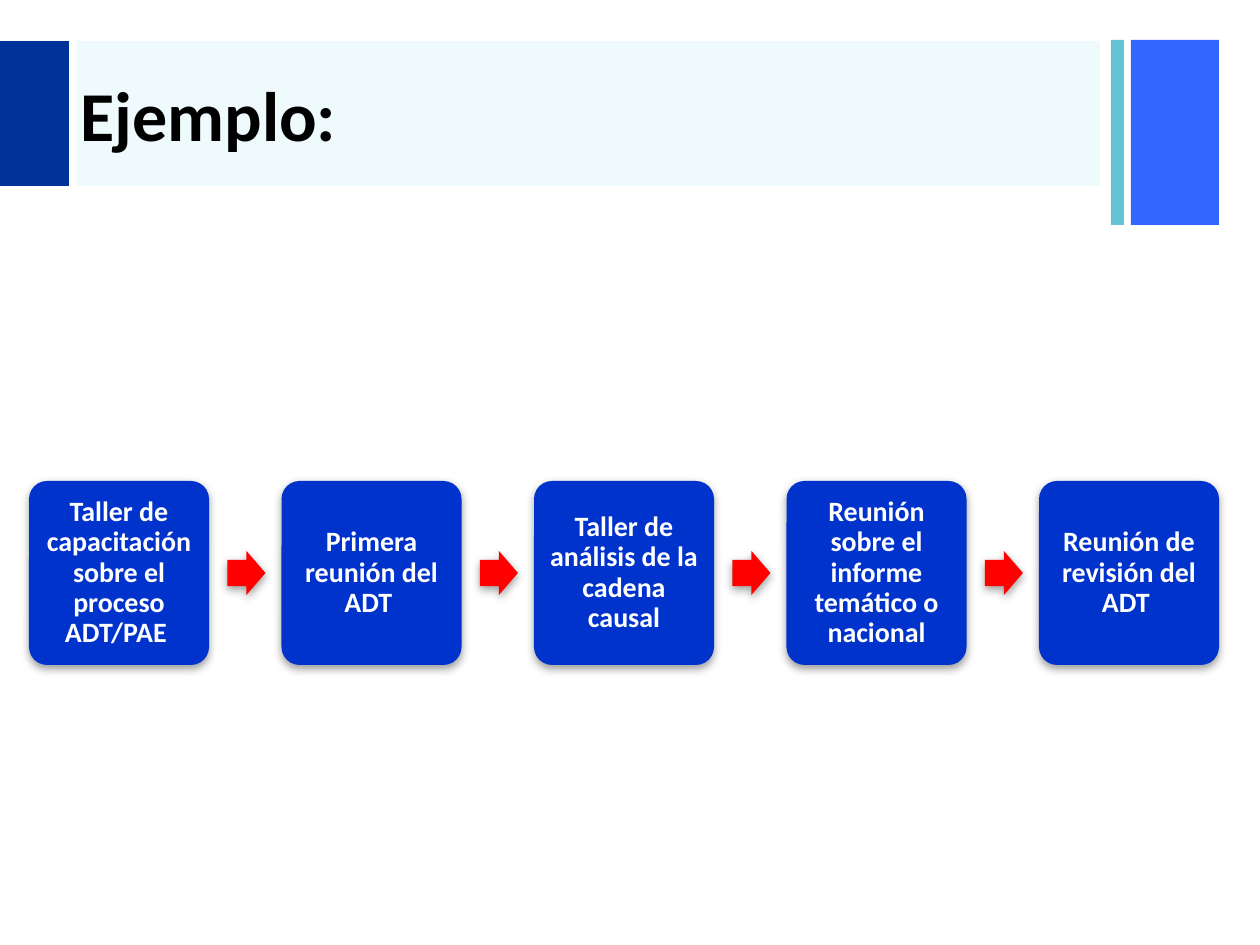
from lxml import etree
from pptx import Presentation, util as u
from pptx.dml.color import RGBColor
from pptx.enum import shapes as s, text as t
from pptx.oxml import ns

PX = 914400 / 126
BLUE = RGBColor(0x33, 0x66, 0xFF)
TEAL = RGBColor(0x65, 0xC4, 0xD2)
CYAN = RGBColor(0x14, 0xC5, 0xD0)
NAVY = RGBColor(0x00, 0x33, 0x99)
ROYAL = RGBColor(0x00, 0x33, 0xCC)
RED = RGBColor(0xFF, 0x00, 0x00)
GREY = RGBColor(0x80, 0x80, 0x80)
BLACK = RGBColor(0, 0, 0)
WHITE = RGBColor(0xFF, 0xFF, 0xFF)

STEPS = [
    "Taller de capacitación sobre el proceso ADT/PAE ",
    "Primera reunión del ADT ",
    "Taller de análisis de la cadena causal",
    "Reunión sobre el informe temático o nacional",
    "Reunión de revisión del ADT ",
]
LEFT, SPAN = 29, 1010  # first box, and distance from first box to last


def px(n):
    return u.Emu(round(n * PX))


def add_sub(node, tag, **attrs):
    return etree.SubElement(node, ns.qn(tag), attrs)


def add_form(page, kind, box, color):
    form = page.shapes.add_shape(kind, *map(px, box))
    form.fill.solid()
    form.fill.fore_color.rgb = color
    form.line.fill.background()
    form.shadow.inherit = False
    return form


def set_alpha(form, pct):
    clr = form.element.spPr.find(".//" + ns.qn("a:srgbClr"))
    add_sub(clr, "a:alpha", val=str(pct * 1000))


def add_shade(form):
    """Soft grey shadow straight below the shape."""
    list_ = form.element.spPr.find(ns.qn("a:effectLst"))
    shade = add_sub(list_, "a:outerShdw", blurRad=str(u.Pt(5)),
                    dist=str(u.Pt(2)), dir="5400000", rotWithShape="0")
    clr = add_sub(shade, "a:srgbClr", val=str(GREY))
    add_sub(clr, "a:alpha", val="75000")


def set_font(par, size, color):
    font = par.font
    font.name, font.size, font.bold = "Calibri", u.Pt(size), True
    font.color.rgb = color


def add_step(page, left, words):
    box = add_form(page, s.MSO_SHAPE.ROUNDED_RECTANGLE,
                   (left, 481, 180, 184), ROYAL)
    box.adjustments[0] = 0.1
    add_shade(box)
    frame = box.text_frame
    frame.word_wrap = True
    frame.vertical_anchor = t.MSO_ANCHOR.MIDDLE
    frame.margin_left = frame.margin_right = px(9)
    frame.margin_top = frame.margin_bottom = px(9)
    frame.text = words
    par = frame.paragraphs[0]
    par.alignment = t.PP_ALIGN.CENTER
    par.line_spacing = 0.9
    set_font(par, 16, WHITE)


def add_arrow(page, left):
    arrow = add_form(page, s.MSO_SHAPE.RIGHT_ARROW, (left, 551, 38, 44), RED)
    arrow.adjustments[0], arrow.adjustments[1] = 0.6, 0.5
    add_shade(arrow)


def add_title(page, words):
    title = page.shapes.title
    title.left, title.top, title.width, title.height = map(
        px, (68, 43, 1042, 141))
    frame = title.text_frame
    frame.text = words
    frame.vertical_anchor = t.MSO_ANCHOR.MIDDLE
    par = frame.paragraphs[0]
    par.alignment = t.PP_ALIGN.LEFT
    set_font(par, 40, BLACK)
    # Bring the title in front of its band
    title.element.getparent().append(title.element)


def main():
    deck = Presentation()
    deck.slide_width, deck.slide_height = px(1260), px(945)
    page = deck.slides.add_slide(deck.slide_layouts[5])

    # Header bars
    rect = s.MSO_SHAPE.RECTANGLE
    add_form(page, rect, (1131, 40, 88, 185), BLUE)
    add_form(page, rect, (1111, 40, 13, 185), TEAL)
    band = add_form(page, rect, (77, 41, 1023, 145), CYAN)
    set_alpha(band, 7)
    add_form(page, rect, (0, 41, 69, 145), NAVY)
    add_title(page, "Ejemplo:")

    # Chain of steps, with an arrow before each but the first
    pitch = SPAN / (len(STEPS) - 1)
    for i, words in enumerate(STEPS):
        left = LEFT + i * pitch
        if i:
            add_arrow(page, left - 54)
        add_step(page, left, words)

    deck.save("out.pptx")


if __name__ == "__main__":
    main()
